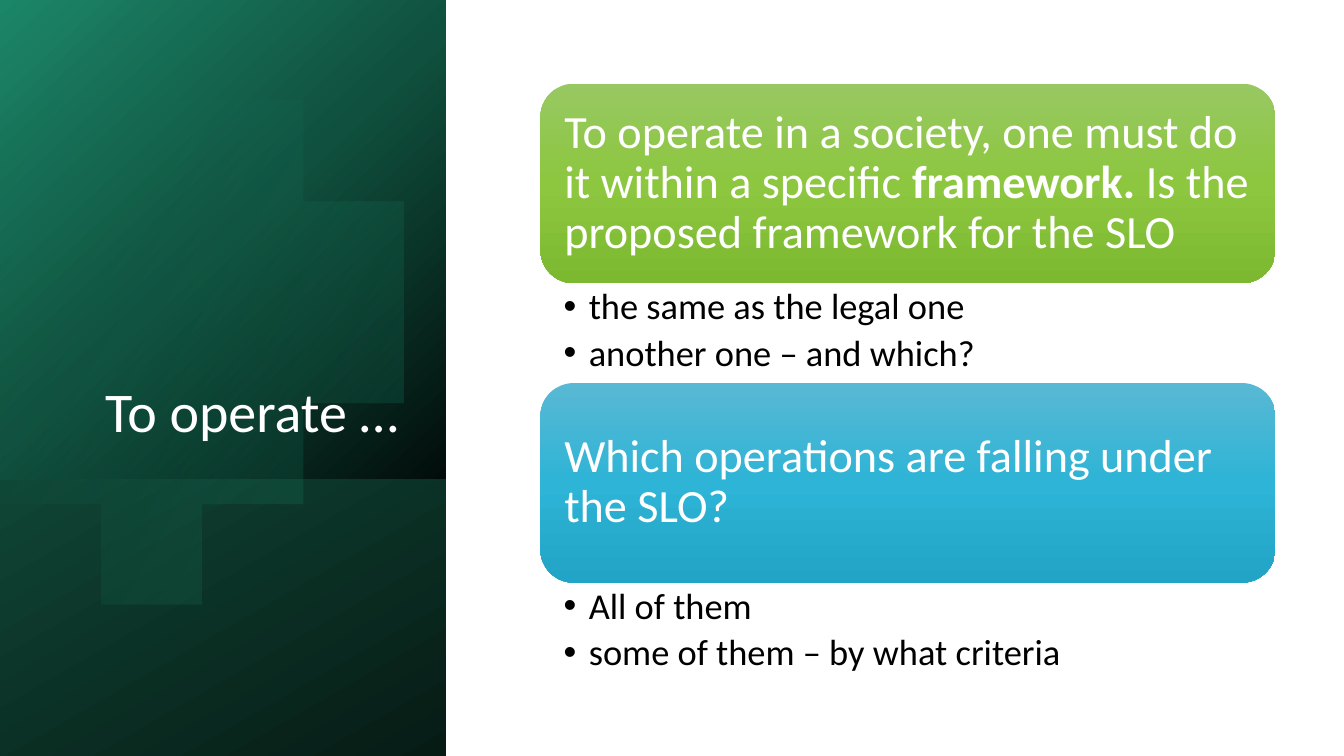
from math import acos, cos, pi, sin

from lxml.etree import SubElement
from pptx import Presentation
from pptx.dml.color import RGBColor
from pptx.enum.shapes import MSO_SHAPE
from pptx.enum.text import MSO_ANCHOR, MSO_AUTO_SIZE, PP_ALIGN
from pptx.oxml.ns import qn
from pptx.util import Inches, Pt

COLORS = {"white": "FFFFFF", "black": "000000", "mint": "1D9A78"}
FONT = "Calibri"
PANEL_WIDTH, PANEL_SPLIT, PANEL_HEIGHT = 4.42, 4.76, 7.5
ROW, DIAGRAM_TOP, DIAGRAM_LEFT, DIAGRAM_WIDTH = 0.99, 0.83, 5.36, 7.29


def fill_gradient(shape, stops, angle):
    """Fill with (position %, hex colour, opacity %) stops; angle runs clockwise."""
    shape.shadow.inherit = False
    shape.line.fill.background()
    shape.fill.gradient()
    gradient = shape._element.spPr.find(qn("a:gradFill"))
    for child in list(gradient):
        gradient.remove(child)
    stop_list = SubElement(gradient, qn("a:gsLst"))
    for position, color, opacity in stops:
        stop = SubElement(stop_list, qn("a:gs"), pos=str(position * 1000))
        color_element = SubElement(stop, qn("a:srgbClr"), val=color)
        if opacity < 100:
            SubElement(color_element, qn("a:alpha"), val=str(opacity * 1000))
    SubElement(gradient, qn("a:lin"), ang=str(angle * 60000), scaled="0")


def write_paragraph(paragraph, runs, size, color, space_after=0):
    """Write (text, bold) runs in one size and colour."""
    spacing = {"line_spacing": 0.9, "space_before": Pt(0), "space_after": Pt(space_after)}
    for name, value in spacing.items():
        setattr(paragraph, name, value)
    for text, bold in runs:
        run = paragraph.add_run()
        run.text = text
        for name, value in {"name": FONT, "size": Pt(size), "bold": bold}.items():
            setattr(run.font, name, value)
        run.font.color.rgb = RGBColor.from_string(COLORS[color])


presentation = Presentation()
presentation.slide_width, presentation.slide_height = Inches(13.33), Inches(7.5)
slide = presentation.slides.add_slide(presentation.slide_layouts[3])
shapes = slide.shapes
title, *lists = slide.placeholders

# Green side panel in two bands
bands = [
    (0, PANEL_SPLIT, [(0, "1C8668", 100), (50, "10503E", 100), (100, "020D0A", 100)], 47),
    (PANEL_SPLIT, PANEL_HEIGHT, [(0, "0F4535", 100), (100, "071B15", 100)], 60),
]
for top, bottom, stops, angle in bands:
    band = shapes.add_shape(MSO_SHAPE.RECTANGLE, 0, Inches(top),
                            Inches(PANEL_WIDTH), Inches(bottom - top))
    fill_gradient(band, stops, angle)

# Faint disc, cut off by the left edge of the slide
center_x, center_y, radius, steps = 1.45, 3.38, 2.28, 120
cut = acos(-center_x / radius)
arc = [(center_x + radius * cos(angle), center_y + radius * sin(angle))
       for angle in (cut * (2 * step / steps - 1) for step in range(steps + 1))]
builder = shapes.build_freeform(*arc[0], scale=Inches(1))
builder.add_line_segments(arc[1:], close=True)
fill_gradient(builder.convert_to_shape(),
              [(0, COLORS["mint"], 0), (30, COLORS["mint"], 2), (100, COLORS["mint"], 24)], 30)

# Title over the panel
shapes._spTree.append(title._element)
title_box = {"left": 0.64, "top": 1.84, "width": 3.41, "height": 2.62}
for name, value in title_box.items():
    setattr(title, name, Inches(value))
title.text_frame.auto_size = MSO_AUTO_SIZE.NONE
title.text_frame.vertical_anchor = MSO_ANCHOR.BOTTOM
title_paragraph = title.text_frame.paragraphs[0]
title_paragraph.alignment = PP_ALIGN.RIGHT
write_paragraph(title_paragraph, [("To operate …", False)], 40, "white")

# Two cards, each two rows high, followed by a one-row list
sections = [
    (("98C862", "8CC73F", "7DB831"),
     [("To operate in a society, one must do it within a specific ", False),
      ("framework. ", True), ("Is the proposed framework for the SLO", False)],
     ["the same as the legal one", "another one – and which?"]),
    (("59B8D4", "2EB4D6", "21A4C6"),
     [("Which operations are falling under the SLO?", False)],
     ["All of them", "some of them – by what criteria"]),
]
for index, (card_colors, card_runs, items) in enumerate(sections):
    top = DIAGRAM_TOP + index * 3 * ROW
    card = shapes.add_shape(MSO_SHAPE.ROUNDED_RECTANGLE, Inches(DIAGRAM_LEFT), Inches(top),
                            Inches(DIAGRAM_WIDTH), Inches(2 * ROW))
    fill_gradient(card, [(position, color, 100)
                         for position, color in zip((0, 50, 100), card_colors)], 90)
    frame = card.text_frame
    frame.word_wrap = True
    frame.vertical_anchor = MSO_ANCHOR.MIDDLE
    for side in ("left", "top", "right", "bottom"):
        setattr(frame, f"margin_{side}", Inches(0.14))
    frame.paragraphs[0].alignment = PP_ALIGN.LEFT
    write_paragraph(frame.paragraphs[0], card_runs, 33, "white")

    bullet_list = lists[index]
    list_box = {"left": DIAGRAM_LEFT, "top": top + 2 * ROW, "width": DIAGRAM_WIDTH, "height": ROW}
    for name, value in list_box.items():
        setattr(bullet_list, name, Inches(value))
    frame = bullet_list.text_frame
    frame.auto_size = MSO_AUTO_SIZE.NONE
    frame.vertical_anchor = MSO_ANCHOR.TOP
    margins = {"margin_left": 0.23, "margin_top": 0.05, "margin_right": 0.26, "margin_bottom": 0.05}
    for name, value in margins.items():
        setattr(frame, name, Inches(value))
    for number, item in enumerate(items):
        paragraph = frame.add_paragraph() if number else frame.paragraphs[0]
        write_paragraph(paragraph, [(item, False)], 26, "black", space_after=5.2)
        properties = paragraph._p.get_or_add_pPr()
        properties.set("marL", str(Inches(0.25)))
        properties.set("indent", str(-Inches(0.25)))
        SubElement(properties, qn("a:buChar"), char="•")

presentation.save("out.pptx")
